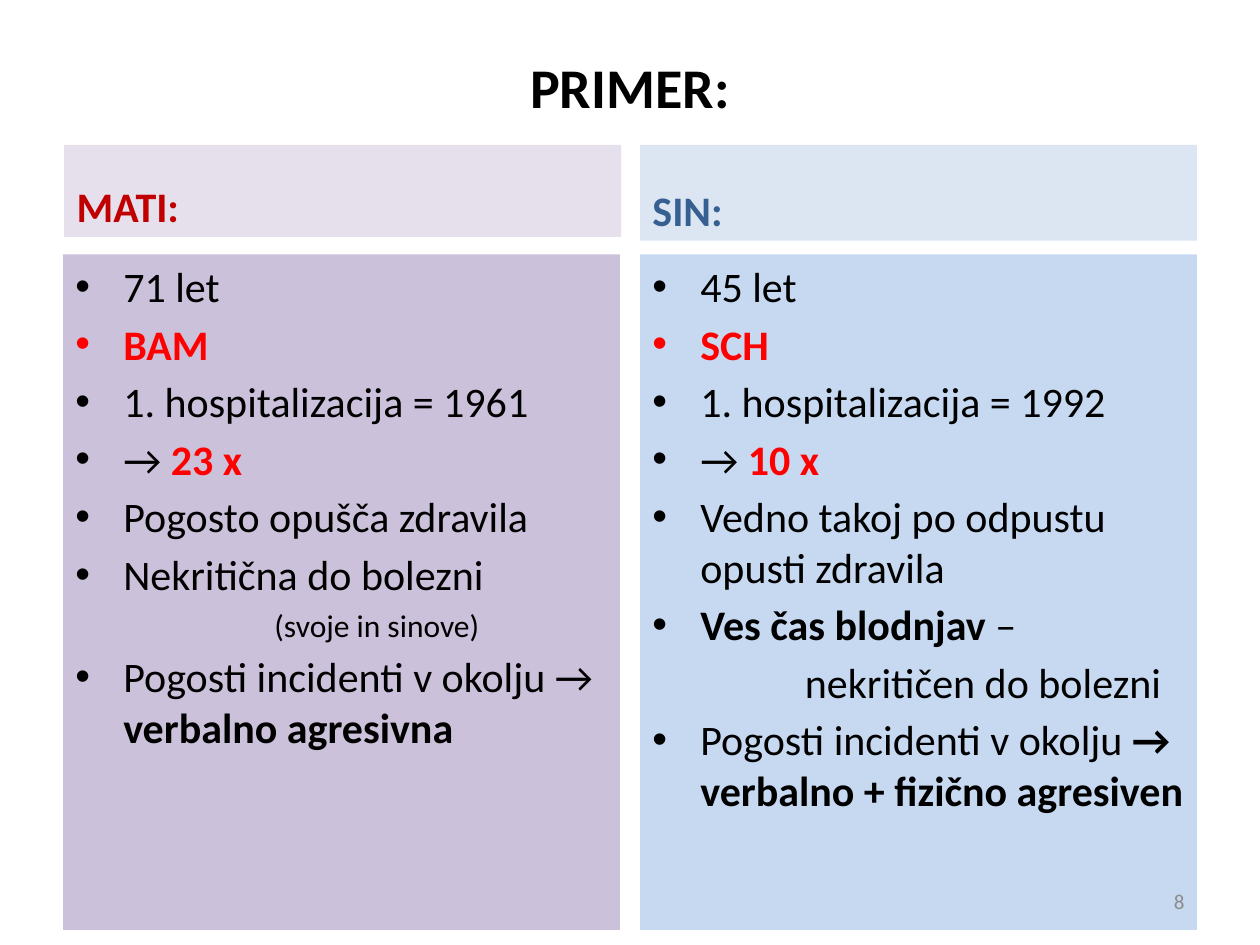
from pptx import Presentation
from pptx.dml.color import RGBColor
from pptx.enum.shapes import MSO_SHAPE as Shape
from pptx.enum.text import MSO_ANCHOR as Anchor, PP_ALIGN as Align
from pptx.oxml.ns import qn
from pptx.util import Inches, Pt
from lxml.etree import SubElement

MARGIN, COLUMN, PITCH = 0.5, 4.42, 4.58
INDENT = 0.38
BLACK, RED = "000000", "FF0000"


def color(value):
    return RGBColor.from_string(value)


def add_text(box, anchor, lines, align=Align.LEFT, before=0):
    frame = box.text_frame
    for name, value in {"word_wrap": True, "vertical_anchor": anchor}.items():
        setattr(frame, name, value)
    for number, (indent, spans) in enumerate(lines):
        para = frame.add_paragraph() if number else frame.paragraphs[0]
        for name, value in {"alignment": align, "space_before": Pt(before)}.items():
            setattr(para, name, value)
        if indent:
            props = para._p.get_or_add_pPr()
            props.set("marL", str(Inches(indent)))
            if indent == INDENT:
                props.set("indent", str(-Inches(INDENT)))
                SubElement(props, qn("a:buFont")).set("typeface", "Arial")
                SubElement(props, qn("a:buChar")).set("char", "•")
        for text, size, shade, bold in spans:
            span = para.add_run()
            span.text = text
            span.font.color.rgb = color(shade)
            for name, value in {"name": "Calibri", "size": Pt(size), "bold": bold}.items():
                setattr(span.font, name, value)


deck = Presentation()
deck.slide_width, deck.slide_height = Inches(10), Inches(7.5)
page = deck.slides.add_slide(deck.slide_layouts[6])

title = page.shapes.add_textbox(*map(Inches, (MARGIN, 0.3, 9, 0.77)))
add_text(title, Anchor.MIDDLE, [(0, [("PRIMER:", 32, BLACK, True)])], Align.CENTER)

mother = [
    (INDENT, [("71 let", 24, BLACK, False)]),
    (INDENT, [("BAM", 24, RED, True)]),
    (INDENT, [("1. hospitalizacija = 1961", 24, BLACK, False)]),
    (INDENT, [("→ ", 24, BLACK, False), ("23 x", 24, RED, True)]),
    (INDENT, [("Pogosto opušča zdravila", 24, BLACK, False)]),
    (INDENT, [("Nekritična do bolezni", 24, BLACK, False)]),
    (1.58, [("(svoje in sinove)", 18, BLACK, False)]),
    (INDENT, [("Pogosti incidenti v okolju → ", 24, BLACK, False),
              ("verbalno agresivna", 24, BLACK, True)]),
]
son = [
    (INDENT, [("45 let", 24, BLACK, False)]),
    (INDENT, [("SCH", 24, RED, True)]),
    (INDENT, [("1. hospitalizacija = 1992", 24, BLACK, False)]),
    (INDENT, [("→ ", 24, BLACK, False), ("10 x", 24, RED, True)]),
    (INDENT, [("Vedno takoj po odpustu opusti zdravila", 24, BLACK, False)]),
    (INDENT, [("Ves čas blodnjav ", 24, BLACK, True), ("–", 24, BLACK, False)]),
    (1.21, [("nekritičen do bolezni", 24, BLACK, False)]),
    (INDENT, [("Pogosti incidenti v okolju ", 24, BLACK, False),
              ("→ verbalno + fizično agresiven", 24, BLACK, True)]),
]
columns = [
    ("MATI:", "C00000", "E6E0EC", 0.01, 0.73, "CCC1DA", mother),
    ("SIN:", "376092", "DCE6F2", 0, 0.76, "C6D9F1", son),
]
for column, (heading, shade, head_fill, shift, height, body_fill, lines) in enumerate(columns):
    left = MARGIN + column * PITCH
    heading_lines = [(0, [(heading, 24, shade, True)])]
    for x, top, tall, fill, anchor, content in (
        (left + shift, 1.15, height, head_fill, Anchor.BOTTOM, heading_lines),
        (left, 2.02, 5.36, body_fill, Anchor.TOP, lines),
    ):
        panel = page.shapes.add_shape(Shape.RECTANGLE, *map(Inches, (x, top, COLUMN, tall)))
        panel.shadow.inherit = False
        panel.fill.solid()
        panel.fill.fore_color.rgb = color(fill)
        panel.line.fill.background()
        add_text(panel, anchor, content, before=4.1)

number_box = page.shapes.add_textbox(*map(Inches, (7.17, 6.95, 2.33, 0.4)))
add_text(number_box, Anchor.MIDDLE, [(0, [("8", 12, "8C8C8C", False)])], Align.RIGHT)

deck.save("out.pptx")
